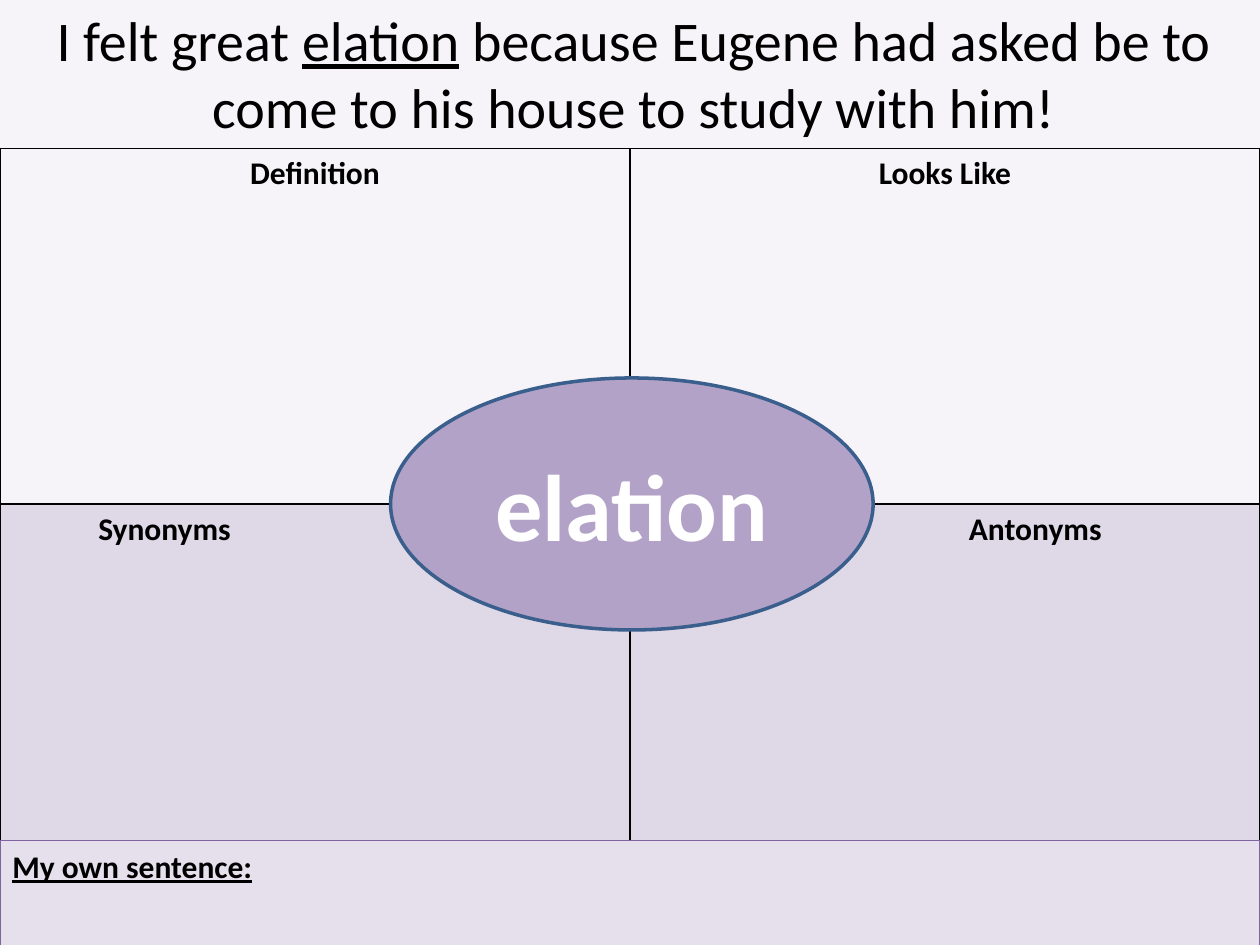
"""Build a vocabulary square for the word "elation"."""
from dataclasses import dataclass

from lxml.etree import SubElement
from pptx import Presentation
from pptx.dml.color import RGBColor
from pptx.enum.shapes import MSO_SHAPE
from pptx.enum.text import MSO_ANCHOR, MSO_AUTO_SIZE, PP_ALIGN
from pptx.oxml.ns import qn
from pptx.util import Inches, Pt


@dataclass(frozen=True)
class Theme:
    font: str = "Calibri"
    ink: str = "000000"
    white: str = "FFFFFF"
    background: str = "F6F4F9"
    shade: str = "DED8E7"
    band: str = "E6E0EC"
    band_line: str = "8064A2"
    oval: str = "B3A2C7"
    oval_line: str = "3A5F8C"
    title: int = 32
    label: int = 18
    word: int = 54


@dataclass(frozen=True)
class Box:
    left: float
    top: float
    width: float
    height: float

    def place(self) -> tuple:
        return tuple(Inches(v) for v in (self.left, self.top, self.width, self.height))


@dataclass(frozen=True)
class Quadrant:
    text: str
    row: int
    col: int
    indent: float = 0.1
    align: PP_ALIGN = PP_ALIGN.LEFT
    fill: str = ""


THEME = Theme()
WIDTH, HEIGHT = 10, 7.5
ROWS = (2.82, 3.12)
TITLE = Box(0.32, -0.01, 9.42, 1.18)
GRID = Box(0, 1.18, WIDTH, sum(ROWS))
SENTENCE = Box(0, 6.67, WIDTH, 1.01)
OVAL = Box(3.1, 3, 3.83, 2)
QUADRANTS = (
    Quadrant("Definition", 0, 0, align=PP_ALIGN.CENTER),
    Quadrant("Looks Like", 0, 1, align=PP_ALIGN.CENTER),
    Quadrant("Synonyms", 1, 0, indent=0.78, fill=THEME.shade),
    Quadrant("Antonyms", 1, 1, indent=2.69, fill=THEME.shade),
)


def add_text(p, text: str, *, size: int = THEME.label, color: str = THEME.ink,
             bold: bool = True, underline: bool = False,
             align: PP_ALIGN = PP_ALIGN.LEFT) -> None:
    p.alignment = align
    r = p.add_run()
    r.text = text
    r.font.name = THEME.font
    r.font.size = Pt(size)
    r.font.bold = bold
    r.font.underline = underline
    r.font.color.rgb = RGBColor.from_string(color)


def add_block(s, kind: MSO_SHAPE, box: Box, fill: str, line: str, width: float,
              anchor: MSO_ANCHOR):
    sp = s.shapes.add_shape(kind, *box.place())
    sp.shadow.inherit = False
    sp.fill.solid()
    sp.fill.fore_color.rgb = RGBColor.from_string(fill)
    sp.line.color.rgb = RGBColor.from_string(line)
    sp.line.width = Pt(width)
    sp.text_frame.word_wrap = True
    sp.text_frame.vertical_anchor = anchor
    return sp.text_frame.paragraphs[0]


def add_borders(cell) -> None:
    tc_pr = cell._tc.get_or_add_tcPr()
    for side in ("a:lnL", "a:lnR", "a:lnT", "a:lnB"):
        ln = SubElement(tc_pr, qn(side), w=str(Pt(1)))
        solid = SubElement(ln, qn("a:solidFill"))
        SubElement(solid, qn("a:srgbClr"), val=THEME.ink)


def add_quadrant(table, quadrant: Quadrant) -> None:
    cell = table.cell(quadrant.row, quadrant.col)
    add_borders(cell)
    if quadrant.fill:
        cell.fill.solid()
        cell.fill.fore_color.rgb = RGBColor.from_string(quadrant.fill)
    else:
        cell.fill.background()
    cell.margin_left = Inches(quadrant.indent)
    add_text(cell.text_frame.paragraphs[0], quadrant.text, align=quadrant.align)


def add_title(s) -> None:
    sp = s.shapes.title
    sp.left, sp.top, sp.width, sp.height = TITLE.place()
    tf = sp.text_frame
    tf.word_wrap = True
    tf.auto_size = MSO_AUTO_SIZE.NONE
    tf.vertical_anchor = MSO_ANCHOR.TOP
    p = tf.paragraphs[0]
    for text, underline in (
        ("I felt great ", False),
        ("elation", True),
        (" because Eugene had asked be to come to his house to study with him!", False),
    ):
        add_text(p, text, size=THEME.title, bold=False, underline=underline,
                 align=PP_ALIGN.CENTER)


def main() -> None:
    prs = Presentation()
    prs.slide_width, prs.slide_height = Inches(WIDTH), Inches(HEIGHT)
    s = prs.slides.add_slide(prs.slide_layouts[5])
    s.background.fill.solid()
    s.background.fill.fore_color.rgb = RGBColor.from_string(THEME.background)
    add_title(s)

    table = s.shapes.add_table(len(ROWS), 2, *GRID.place()).table
    table.first_row = table.horz_banding = False
    for row, height in zip(table.rows, ROWS):
        row.height = Inches(height)
    for quadrant in QUADRANTS:
        add_quadrant(table, quadrant)

    p = add_block(s, MSO_SHAPE.RECTANGLE, SENTENCE, THEME.band, THEME.band_line, 0.75,
                  MSO_ANCHOR.TOP)
    add_text(p, "My own sentence:", underline=True)
    p = add_block(s, MSO_SHAPE.OVAL, OVAL, THEME.oval, THEME.oval_line, 2,
                  MSO_ANCHOR.MIDDLE)
    add_text(p, "elation", size=THEME.word, color=THEME.white, align=PP_ALIGN.CENTER)
    prs.save("out.pptx")


if __name__ == "__main__":
    main()
